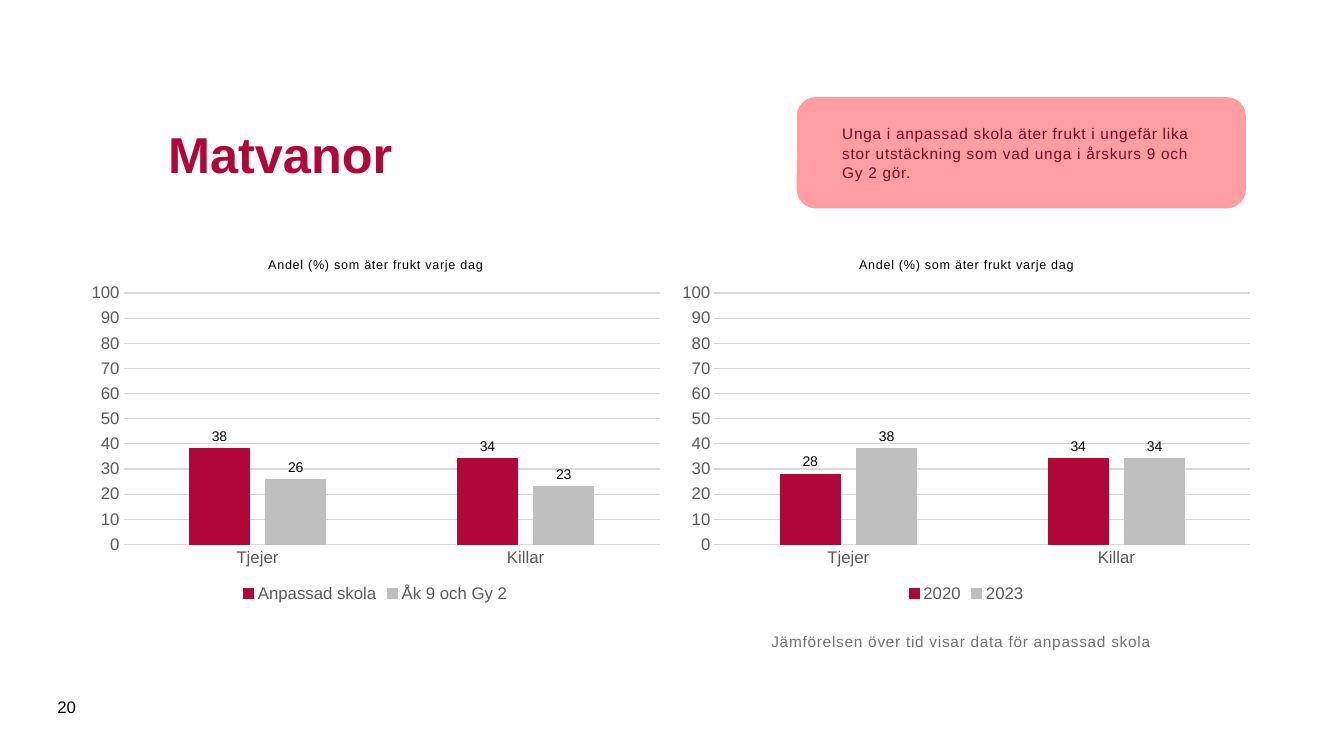
"""Build the slide on fruit-eating habits with two column charts."""
from lxml import etree
from pptx import Presentation
from pptx.chart.data import CategoryChartData
from pptx.dml.color import RGBColor
from pptx.enum import chart as ch, shapes, text
from pptx.oxml import ns
from pptx.util import Inches, Pt

CRIMSON = RGBColor(0xB1, 0x06, 0x3A)
MAROON = RGBColor(0x79, 0x07, 0x26)
PINK = RGBColor(0xFF, 0x9D, 0xA2)
SILVER = RGBColor(0xBF, 0xBF, 0xBF)
GRID = RGBColor(0xD9, 0xD9, 0xD9)
AXIS_TEXT = RGBColor(0x59, 0x59, 0x59)
NOTE_TEXT = RGBColor(0x71, 0x71, 0x71)
BLACK = RGBColor(0, 0, 0)

FONT = "Arial"
NUMBER_FORMAT = "#,##0;#,##0"
CHART_TITLE = "Andel (%) som äter frukt varje dag"
CATEGORIES = ["Tjejer", "Killar"]
CHARTS = [
    [("Anpassad skola", (38, 34)), ("Åk 9 och Gy 2", (26, 23))],
    [("2020", (28, 34)), ("2023", (38, 34))],
]
CHART_LEFT, CHART_STEP = 0.79, 5.86


def style_font(font, size, color, bold=False):
    """Set the typeface, size, colour and weight of a font."""
    font.name, font.size, font.bold = FONT, Pt(size), bold
    font.color.rgb = color


def write(sp, words, size, color, bold=False, spacing=0, inset=(0.1, 0.05),
          anchor=text.MSO_ANCHOR.MIDDLE):
    """Write one left-aligned paragraph in a shape and return it."""
    tf = sp.text_frame
    tf.word_wrap = True
    tf.vertical_anchor = anchor
    tf.margin_left = tf.margin_right = Inches(inset[0])
    tf.margin_top = tf.margin_bottom = Inches(inset[1])
    p = tf.paragraphs[0]
    p.alignment = text.PP_ALIGN.LEFT
    r = p.add_run()
    r.text = words
    style_font(p.font, size, color, bold)
    if spacing:
        r.font._element.set("spc", str(spacing))
    return p


def add_text(s, box, words, size, color, **options):
    """Add a text box."""
    sp = s.shapes.add_textbox(*map(Inches, box))
    write(sp, words, size, color, **options)


def add_callout(s, box, words):
    """Add the rounded, slightly transparent message box."""
    sp = s.shapes.add_shape(shapes.MSO_SHAPE.ROUNDED_RECTANGLE, *map(Inches, box))
    sp.shadow.inherit = False
    sp.fill.solid()
    sp.fill.fore_color.rgb = PINK
    color = sp._element.spPr.find(ns.qn("a:solidFill"))[0]
    etree.SubElement(color, ns.qn("a:alpha")).set("val", "98000")
    sp.line.color.rgb = PINK
    sp.line.width = Pt(1)
    p = write(sp, words, 11, MAROON, spacing=50, inset=(0.39, 0.2))
    p.line_spacing = 1.05


def style_axes(chart):
    """Format the category and value axes."""
    for axis in (chart.category_axis, chart.value_axis):
        axis.major_tick_mark = axis.minor_tick_mark = ch.XL_TICK_MARK.NONE
        style_font(axis.tick_labels.font, 12, AXIS_TEXT)
    values = chart.value_axis
    values.minimum_scale, values.maximum_scale, values.major_unit = 0, 100, 10
    values.tick_labels.number_format = NUMBER_FORMAT
    values.tick_labels.number_format_is_linked = False
    values.format.line.fill.background()
    for line in (chart.category_axis.format.line, values.major_gridlines.format.line):
        line.color.rgb = GRID
        line.width = Pt(0.75)


def style_series(series, color):
    """Colour one series and label its columns."""
    series.format.fill.solid()
    series.format.fill.fore_color.rgb = color
    series.format.line.color.rgb = color
    series.format.line.width = Pt(0.75)
    labels = series.data_labels
    labels.show_value = True
    labels.position = ch.XL_LABEL_POSITION.OUTSIDE_END
    labels.number_format = NUMBER_FORMAT
    labels.number_format_is_linked = False
    style_font(labels.font, 10, BLACK)


def add_column_chart(s, left, series):
    """Add one clustered column chart."""
    data = CategoryChartData(number_format="0")
    data.categories = CATEGORIES
    for name, values in series:
        data.add_series(name, values)
    box = map(Inches, (left, 2.4, 5.87, 3.62))
    chart = s.shapes.add_chart(ch.XL_CHART_TYPE.COLUMN_CLUSTERED, *box, data).chart
    style_font(chart.font, 10, BLACK)
    p = chart.chart_title.text_frame.paragraphs[0]
    r = p.add_run()
    r.text = CHART_TITLE
    style_font(p.font, 9, BLACK)
    r.font._element.set("spc", "50")
    chart.chart_title.include_in_layout = False
    chart.has_legend = True
    chart.legend.position = ch.XL_LEGEND_POSITION.BOTTOM
    chart.legend.include_in_layout = False
    style_font(chart.legend.font, 12, AXIS_TEXT)
    style_axes(chart)
    plot = chart.plots[0]
    plot.gap_width, plot.overlap, plot.vary_by_categories = 219, -27, False
    for columns, color in zip(plot.series, (CRIMSON, SILVER)):
        style_series(columns, color)


def main():
    """Compose and save the slide."""
    prs = Presentation()
    prs.slide_width, prs.slide_height = Inches(13.33), Inches(7.5)
    s = prs.slides.add_slide(prs.slide_layouts[6])
    add_text(s, (1.57, 0.81, 10.24, 1.42), "Matvanor", 36, CRIMSON, bold=True)
    add_text(s, (0.47, 6.81, 0.57, 0.4), "20", 12, BLACK)
    for i, series in enumerate(CHARTS):
        add_column_chart(s, CHART_LEFT + i * CHART_STEP, series)
    add_callout(s, (7.91, 0.97, 4.44, 1.09),
                "Unga i anpassad skola äter frukt i ungefär lika stor utstäckning "
                "som vad unga i årskurs 9 och Gy 2 gör.")
    add_text(s, (7.65, 6.27, 5.31, 0.94),
             "Jämförelsen över tid visar data för anpassad skola", 11, NOTE_TEXT,
             spacing=50, inset=(0, 0), anchor=text.MSO_ANCHOR.TOP)
    prs.save("out.pptx")


if __name__ == "__main__":
    main()
